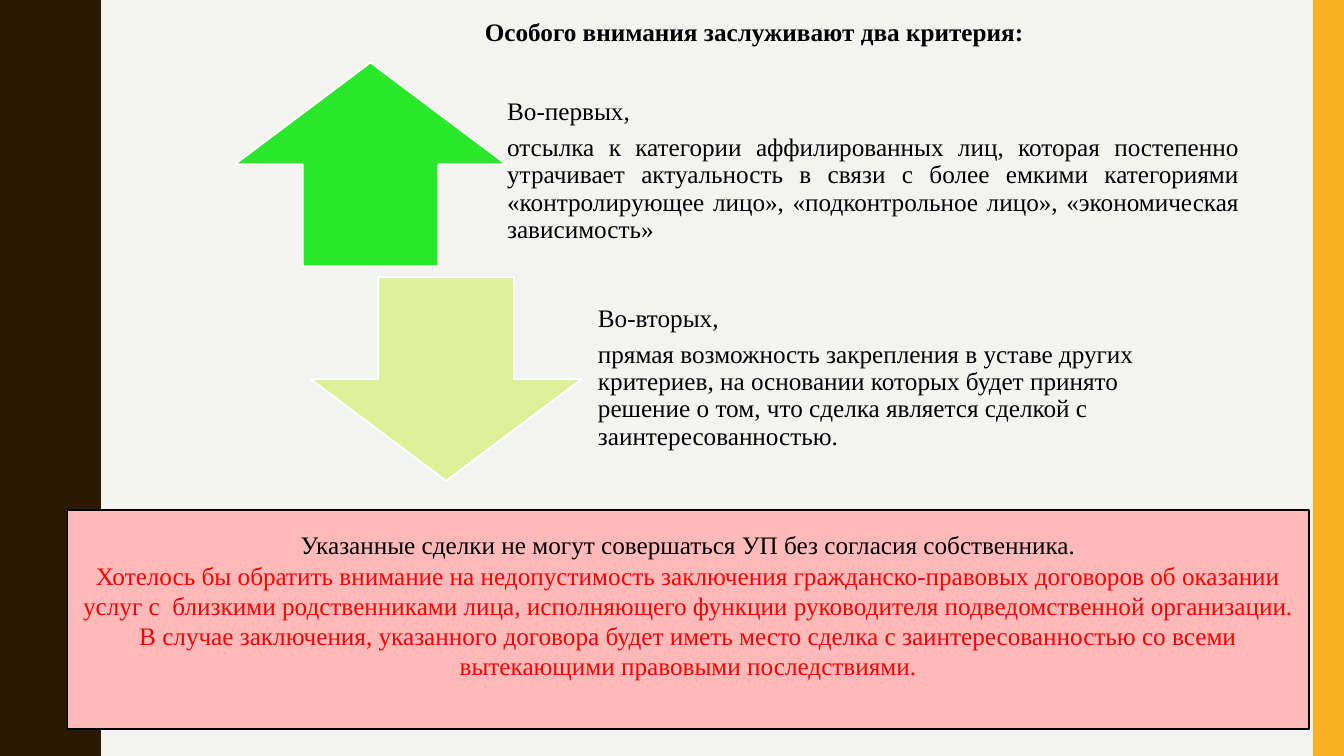
from dataclasses import dataclass
from math import cos, pi

from pptx import Presentation
from pptx import util as u
from pptx.dml import color
from pptx.enum import shapes, text

HUES = {
    "paper": "F3F3F1", "wave": "2A1A00", "strip": "F8B322", "green": "29E729",
    "lime": "DEF199", "pink": "FFB9B9", "white": "FFFFFF", "black": "000000",
    "red": "FF0000",
}
FONT = "Times New Roman"
WIDE, HIGH = 13.33, 7.5
Box = tuple[float, float, float, float]


@dataclass
class Point:
    kind: shapes.MSO_SHAPE
    hue: str
    arrow: Box
    area: Box
    align: text.PP_ALIGN
    lines: tuple[str, str]


POINTS = [
    Point(shapes.MSO_SHAPE.UP_ARROW, "green", (2.33, 0.62, 2.69, 2.02),
          (4.89, 0.76, 7.54, 2.02), text.PP_ALIGN.JUSTIFY,
          ("Во-первых,",
           "отсылка к категории аффилированных лиц, которая постепенно "
           "утрачивает актуальность в связи с более емкими категориями "
           "«контролирующее лицо», «подконтрольное лицо», "
           "«экономическая зависимость»")),
    Point(shapes.MSO_SHAPE.DOWN_ARROW, "lime", (3.08, 2.75, 2.69, 2.02),
          (5.79, 2.81, 6.42, 2.02), text.PP_ALIGN.LEFT,
          ("Во-вторых,",
           "прямая возможность закрепления в уставе других критериев, на "
           "основании которых будет принято решение о том, что сделка "
           "является сделкой с заинтересованностью.")),
]
NOTES = [
    ("black", "Указанные сделки не могут совершаться УП без согласия "
              "собственника."),
    ("red", "Хотелось бы обратить внимание на недопустимость заключения "
            "гражданско-правовых договоров об оказании услуг с  близкими "
            "родственниками лица, исполняющего функции руководителя "
            "подведомственной организации. В случае заключения, указанного "
            "договора будет иметь место сделка с заинтересованностью со "
            "всеми вытекающими правовыми последствиями."),
]


def rgb(hue: str) -> color.RGBColor:
    return color.RGBColor.from_string(HUES[hue])


def span(box: Box) -> list[int]:
    return [u.Inches(size) for size in box]


def paint(item, hue: str, edge: str = "") -> None:
    item.shadow.inherit = False
    item.fill.solid()
    item.fill.fore_color.rgb = rgb(hue)
    if edge:
        item.line.color.rgb = rgb(edge)
        item.line.width = u.Pt(1.25)
    else:
        item.line.fill.background()


def add_form(slide, kind: shapes.MSO_SHAPE, box: Box, hue: str, edge: str = ""):
    item = slide.shapes.add_shape(kind, *span(box))
    paint(item, hue, edge)
    return item


def style(para, hue: str, align: text.PP_ALIGN, bold: bool = False) -> None:
    para.alignment = align
    para.font.name = FONT
    para.font.size = u.Pt(18)
    para.font.bold = bold
    para.font.color.rgb = rgb(hue)


def add_wave(slide) -> None:
    count = 120
    edge = []
    for step in range(count + 1):
        top = HIGH * step / count
        edge.append((0.875 - 0.095 * cos(2 * pi * top / 1.5), top))
    pen = slide.shapes.build_freeform(0, 0, scale=u.Inches(1))
    pen.add_line_segments(edge + [(0, HIGH)], close=True)
    paint(pen.convert_to_shape(), "wave")


def add_title(slide) -> None:
    title = slide.shapes.title
    title.left, title.top, title.width, title.height = span((2.5, 0.11, 9.96, 0.4))
    frame = title.text_frame
    frame.text = "Особого внимания заслуживают два критерия:"
    frame.auto_size = text.MSO_AUTO_SIZE.NONE
    frame.vertical_anchor = text.MSO_ANCHOR.TOP
    style(frame.paragraphs[0], "black", text.PP_ALIGN.CENTER, True)


def add_point(slide, point: Point) -> None:
    add_form(slide, point.kind, point.arrow, point.hue, "white")
    frame = slide.shapes.add_textbox(*span(point.area)).text_frame
    frame.word_wrap = True
    frame.vertical_anchor = text.MSO_ANCHOR.MIDDLE
    frame.margin_left = frame.margin_right = frame.margin_bottom = u.Inches(0.14)
    frame.margin_top = 0
    frame.text = "\n".join(point.lines)
    for para in frame.paragraphs:
        style(para, "black", point.align)
        para.line_spacing = 0.9
        para.space_after = u.Pt(6.3)


def add_notes(slide) -> None:
    panel = add_form(slide, shapes.MSO_SHAPE.RECTANGLE,
                     (0.67, 5.06, 12.31, 2.17), "pink", "black")
    frame = panel.text_frame
    frame.word_wrap = True
    frame.vertical_anchor = text.MSO_ANCHOR.MIDDLE
    frame.margin_bottom = u.Inches(0.33)
    frame.text = "\n".join(line for _, line in NOTES)
    for para, (hue, _) in zip(frame.paragraphs, NOTES):
        style(para, hue, text.PP_ALIGN.CENTER)


def main() -> None:
    deck = Presentation()
    deck.slide_width, deck.slide_height = u.Inches(WIDE), u.Inches(HIGH)
    slide = deck.slides.add_slide(deck.slide_layouts[5])
    slide.background.fill.solid()
    slide.background.fill.fore_color.rgb = rgb("paper")
    add_wave(slide)
    add_form(slide, shapes.MSO_SHAPE.RECTANGLE, (13.02, 0, 0.31, HIGH), "strip")
    add_title(slide)
    for point in POINTS:
        add_point(slide, point)
    add_notes(slide)
    deck.save("out.pptx")


if __name__ == "__main__":
    main()
